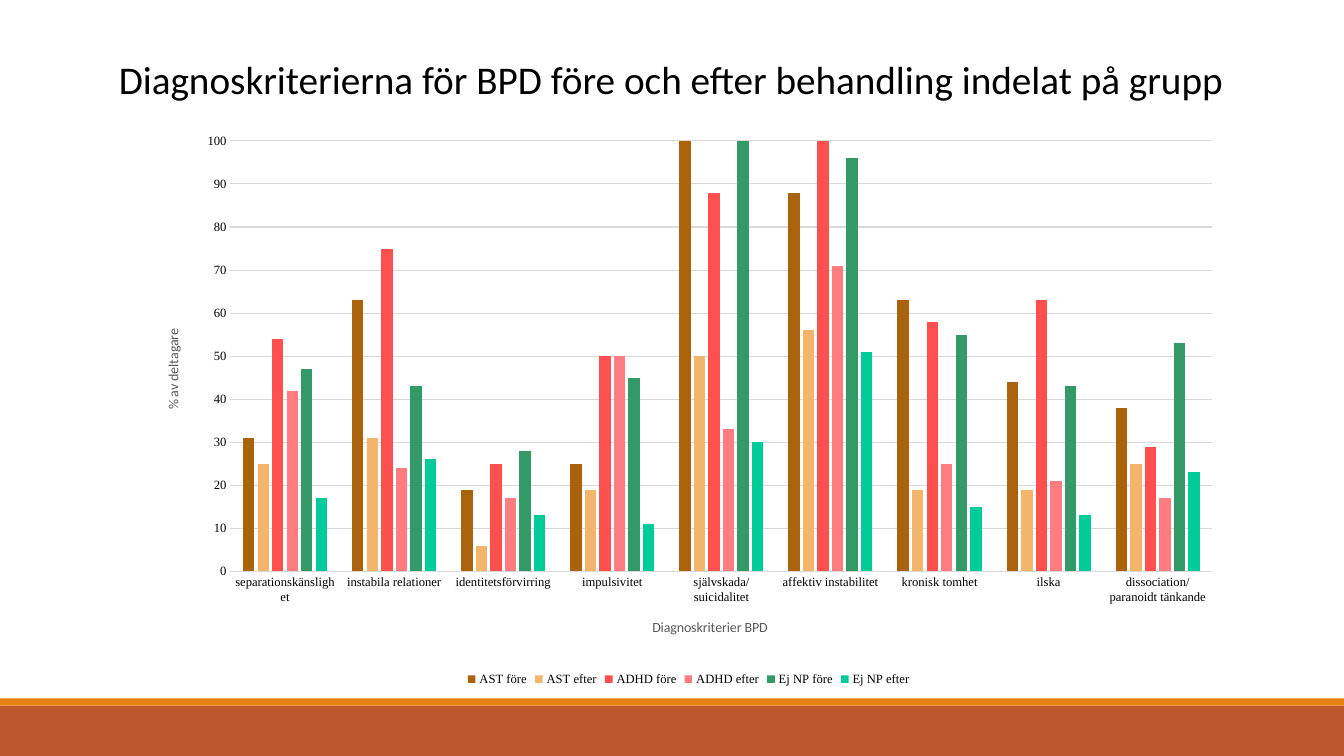
from lxml import etree
from pptx import Presentation
from pptx.chart.data import CategoryChartData
from pptx.dml.color import RGBColor
from pptx.enum.chart import XL_CHART_TYPE, XL_LEGEND_POSITION, XL_TICK_MARK
from pptx.enum.shapes import MSO_SHAPE
from pptx.oxml.ns import qn
from pptx.util import Inches, Pt

COLUMNS = XL_CHART_TYPE.COLUMN_CLUSTERED
BOTTOM = XL_LEGEND_POSITION.BOTTOM
NO_TICK = XL_TICK_MARK.NONE
RECT = MSO_SHAPE.RECTANGLE


def rgb(value):
    return RGBColor.from_string(value)


def set_font(font, name, size, color):
    font.name = name
    font.size = Pt(size)
    font.bold = False
    font.color.rgb = rgb(color)


prs = Presentation()
prs.slide_width = Inches(13.33)
prs.slide_height = Inches(7.5)
s = prs.slides.add_slide(prs.slide_layouts[6])

for top, height, color in [(7, 0.5, "BD582C"), (6.93, 0.07, "E48312")]:
    sp = s.shapes.add_shape(RECT, 0, Inches(top), prs.slide_width, Inches(height))
    sp.shadow.inherit = False
    sp.fill.solid()
    sp.fill.fore_color.rgb = rgb(color)
    sp.line.fill.background()

categories = [
    "separationskänslighet", "instabila relationer", "identitetsförvirring",
    "impulsivitet", "självskada/ suicidalitet", "affektiv instabilitet",
    "kronisk tomhet", "ilska", "dissociation/ paranoidt tänkande",
]
groups = [
    ("AST före", "AB620D", [31, 63, 19, 25, 100, 88, 63, 44, 38]),
    ("AST efter", "F3B56C", [25, 31, 6, 19, 50, 56, 19, 19, 25]),
    ("ADHD före", "FF5050", [54, 75, 25, 50, 88, 100, 58, 63, 29]),
    ("ADHD efter", "FF7C80", [42, 24, 17, 50, 33, 71, 25, 21, 17]),
    ("Ej NP före", "339966", [47, 43, 28, 45, 100, 96, 55, 43, 53]),
    ("Ej NP efter", "00CC99", [17, 26, 13, 11, 30, 51, 15, 13, 23]),
]
data = CategoryChartData()
data.categories = categories
for name, color, values in groups:
    data.add_series(name, values)

chart = s.shapes.add_chart(
    COLUMNS, Inches(1.42), Inches(1.23), Inches(10.82), Inches(5.62), data
).chart
chart.has_title = False
set_font(chart.font, "Calibri", 10, "000000")
chart.has_legend = True
chart.legend.position = BOTTOM
chart.legend.include_in_layout = False
set_font(chart.legend.font, "Times New Roman", 9, "000000")

plot = chart.plots[0]
plot.gap_width = 219
plot.overlap = -27
plot.vary_by_categories = False
for series, (name, color, values) in zip(plot.series, groups):
    series.format.fill.solid()
    series.format.fill.fore_color.rgb = rgb(color)

axes = [
    (chart.category_axis, "Diagnoskriterier BPD"),
    (chart.value_axis, "% av deltagare"),
]
for axis, title in axes:
    axis.major_tick_mark = NO_TICK
    axis.minor_tick_mark = NO_TICK
    set_font(axis.tick_labels.font, "Times New Roman", 9, "000000")
    r = axis.axis_title.text_frame.paragraphs[0].add_run()
    r.text = title
    set_font(r.font, "Calibri", 10, "595959")

value_axis = chart.value_axis
value_axis.minimum_scale = 0
value_axis.maximum_scale = 100
value_axis.major_unit = 10
value_axis.format.line.fill.background()
for line in (chart.category_axis.format.line, value_axis.major_gridlines.format.line):
    line.color.rgb = rgb("D9D9D9")
    line.width = Pt(0.75)

plot_area = chart.element.find(".//" + qn("c:plotArea"))
for layout in plot_area.findall(qn("c:layout")):
    plot_area.remove(layout)
layout = etree.Element(qn("c:layout"))
plot_area.insert(0, layout)
manual = etree.SubElement(layout, qn("c:manualLayout"))
settings = [
    ("layoutTarget", "inner"), ("xMode", "edge"), ("yMode", "edge"),
    ("x", "0.08"), ("y", "0.03"), ("w", "0.9"), ("h", "0.76"),
]
for tag, value in settings:
    etree.SubElement(manual, qn("c:" + tag)).set("val", value)

tf = s.shapes.add_textbox(Inches(1.08), Inches(0.5), Inches(11.64), Inches(0.57)).text_frame
tf.word_wrap = True
r = tf.paragraphs[0].add_run()
r.text = "Diagnoskriterierna för BPD före och efter behandling indelat på grupp"
set_font(r.font, "Calibri", 28, "000000")

prs.save("out.pptx")
